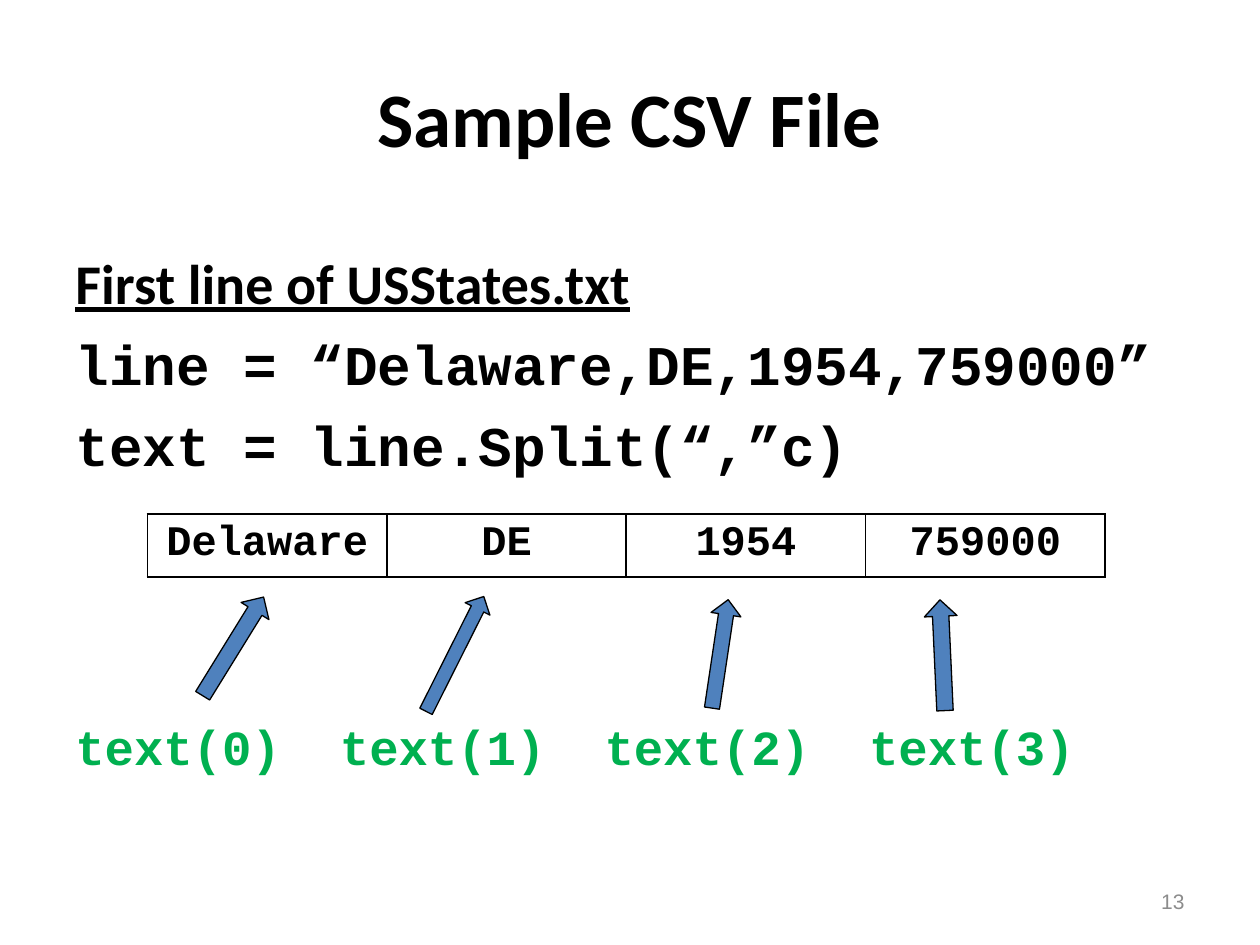
from lxml.etree import SubElement
from pptx import Presentation
from pptx.dml.color import RGBColor
from pptx.enum.shapes import MSO_SHAPE
from pptx.enum.text import MSO_ANCHOR, PP_ALIGN
from pptx.oxml.ns import qn
from pptx.util import Pt

EMU_PER_PX = 9144  # 100 px to the inch
BLACK = RGBColor(0x00, 0x00, 0x00)
WHITE = RGBColor(0xFF, 0xFF, 0xFF)
GREEN = RGBColor(0x00, 0xB0, 0x50)
BLUE = RGBColor(0x4F, 0x81, 0xBD)
GRAY = RGBColor(0x8C, 0x8C, 0x8C)
CODE_FONT = "Courier New"

FIELDS = ["Delaware", "DE", "1954", "759000"]
# left, top, width, height and rotation of each pointer
ARROWS = [
    (139, 500, 92, 26, 121.7),
    (310, 508, 102, 22, 116.7),
    (528, 507, 87, 24, 98.5),
    (704, 507, 88, 26, 87.4),
]


def px(*lengths):
    return [length * EMU_PER_PX for length in lengths]


def write(paragraph, text, size, font="Calibri", color=BLACK, bold=True,
          underline=False, align=PP_ALIGN.LEFT, space_before=0):
    paragraph.alignment = align
    paragraph.space_before = Pt(space_before)
    run = paragraph.add_run()
    run.text = text
    run.font.size = Pt(size)
    run.font.name = font
    run.font.bold = bold
    run.font.underline = underline
    run.font.color.rgb = color


def add_text_frame(slide, box, anchor=MSO_ANCHOR.TOP):
    frame = slide.shapes.add_textbox(*px(*box)).text_frame
    frame.word_wrap = True
    frame.vertical_anchor = anchor
    return frame


def add_line(slide, box, text, size, anchor=MSO_ANCHOR.TOP, **text_format):
    """Place one line of text in its own box."""
    frame = add_text_frame(slide, box, anchor)
    write(frame.paragraphs[0], text, size, **text_format)


def add_code(slide, box):
    """Place the underlined heading and the two lines of code below it."""
    frame = add_text_frame(slide, box)
    write(frame.paragraphs[0], "First line of USStates.txt", 32, underline=True)
    for code in ("line = “Delaware,DE,1954,759000”", "text = line.Split(“,”c)"):
        write(frame.add_paragraph(), code, 32, font=CODE_FONT, space_before=8)


def set_borders(cell, color, width):
    properties = cell._tc.get_or_add_tcPr()
    for index, side in enumerate(("lnL", "lnR", "lnT", "lnB")):
        line = properties.makeelement(qn(f"a:{side}"), {"w": str(Pt(width))})
        fill = SubElement(line, qn("a:solidFill"))
        SubElement(fill, qn("a:srgbClr"), val=str(color))
        properties.insert(index, line)


def add_field_table(slide, box):
    left, top, width, height = px(*box)
    table = slide.shapes.add_table(1, len(FIELDS), left, top, width, height).table
    table.first_row = False
    table.horz_banding = False
    for cell, field in zip(table.rows[0].cells, FIELDS):
        cell.fill.solid()
        cell.fill.fore_color.rgb = WHITE
        set_borders(cell, BLACK, 1)
        write(cell.text_frame.paragraphs[0], field, 24, font=CODE_FONT,
              align=PP_ALIGN.CENTER)


def add_arrow(slide, box, rotation):
    arrow = slide.shapes.add_shape(MSO_SHAPE.LEFT_ARROW, *px(*box))
    arrow.rotation = rotation
    arrow.shadow.inherit = False
    arrow.fill.solid()
    arrow.fill.fore_color.rgb = BLUE
    arrow.line.color.rgb = BLACK
    arrow.line.width = Pt(0.75)


def add_index_labels(slide, box):
    """Spread one label for each field evenly over the box."""
    left, top, width, height = box
    pitch = width // len(FIELDS)
    for index in range(len(FIELDS)):
        add_line(slide, (left + index * pitch, top, pitch, height),
                 f"text({index})", 28, font=CODE_FONT, color=GREEN)


def main():
    presentation = Presentation()
    presentation.slide_width, presentation.slide_height = px(1000, 750)
    slide = presentation.slides.add_slide(presentation.slide_layouts[6])

    add_line(slide, (50, 30, 900, 125), "Sample CSV File", 44,
             anchor=MSO_ANCHOR.MIDDLE, align=PP_ALIGN.CENTER)
    add_code(slide, (50, 192, 929, 200))
    add_index_labels(slide, (50, 564, 840, 54))
    add_line(slide, (717, 695, 233, 40), "13", 12, anchor=MSO_ANCHOR.MIDDLE,
             font="Arial", color=GRAY, bold=False, align=PP_ALIGN.RIGHT)
    for *box, rotation in ARROWS:
        add_arrow(slide, box, rotation)
    add_field_table(slide, (117, 408, 760, 48))

    presentation.save("out.pptx")


if __name__ == "__main__":
    main()
